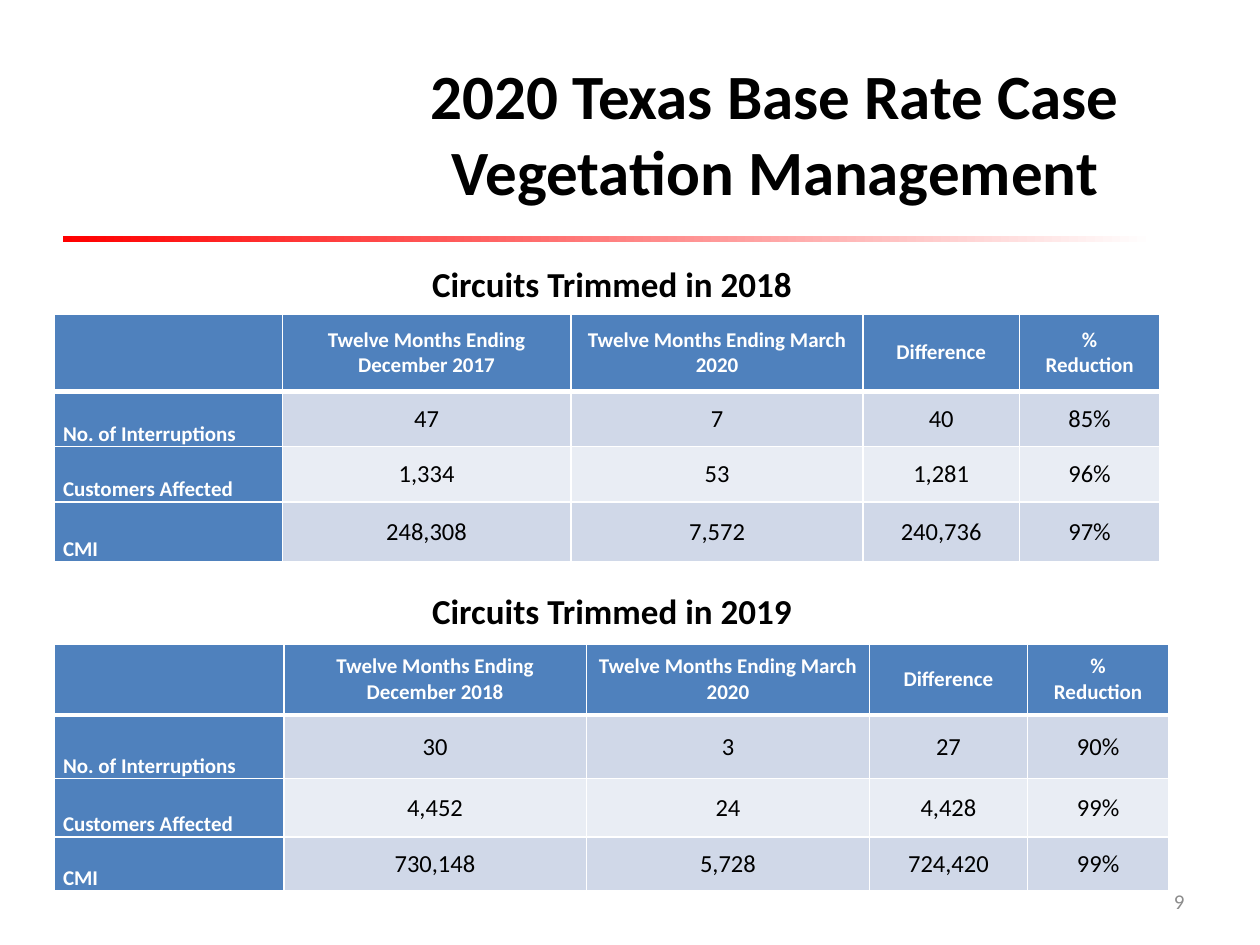
import pptx
import pptx.util
import pptx.dml.color
import pptx.enum.dml
import pptx.enum.shapes
import pptx.enum.text
import pptx.oxml

Pt = pptx.util.Pt
ALIGN = pptx.enum.text.PP_ALIGN
ANCHOR = pptx.enum.text.MSO_ANCHOR
FIT = pptx.enum.text.MSO_AUTO_SIZE

TITLE = "2020 Texas Base Rate Case\vVegetation Management"
PAGE_NUMBER = "9"
ROW_LABELS = ["No. of Interruptions", "Customers Affected", "CMI"]
SECTIONS = [
    {
        "heading": "Circuits Trimmed in 2018",
        "start": "December 2017",
        "values": [
            ["47", "7", "40", "85%"],
            ["1,334", "53", "1,281", "96%"],
            ["248,308", "7,572", "240,736", "97%"],
        ],
        "heading_top": 146.2,
        "table_top": 179.3,
        "columns": [130.3, 165, 167, 89.2, 80.4],
        "rows": [44.5, 31.5, 31.5, 34.5],
    },
    {
        "heading": "Circuits Trimmed in 2019",
        "start": "December 2018",
        "values": [
            ["30", "3", "27", "90%"],
            ["4,452", "24", "4,428", "99%"],
            ["730,148", "5,728", "724,420", "99%"],
        ],
        "heading_top": 333.4,
        "table_top": 368,
        "columns": [131.2, 172.8, 162, 90, 81],
        "rows": [40.5, 36.5, 33.3, 31],
    },
]

THEME = {
    "font": "Calibri",
    "white": "FFFFFF",
    "header": "4F81BD",
    "bands": ["D0D8E8", "E9EDF4"],
    "rule": ["FF0000", "FFFFFF"],
    "title": {"size": 36, "bold": True, "color": "000000"},
    "heading": {"size": 20, "bold": True, "color": "000000"},
    "label": {"size": 12, "bold": True, "color": "FFFFFF"},
    "value": {"size": 14, "bold": False, "color": "000000"},
    "number": {"size": 12, "bold": False, "color": "8C8C8C"},
}
TABLE_LEFT = 31
CELL_FORMAT = {"margin_left": Pt(5), "margin_right": Pt(5), "margin_top": 0, "margin_bottom": 0}


def rgb(code):
    return pptx.dml.color.RGBColor.from_string(code)


def apply(target, values):
    for name, value in values.items():
        setattr(target, name, value)


def write(frame, text, style, align):
    frame.text = text
    look = THEME[style]
    for para in frame.paragraphs:
        para.alignment = align
        for span in para.runs:
            apply(span.font, {"name": THEME["font"], "size": Pt(look["size"]), "bold": look["bold"]})
            span.font.color.rgb = rgb(look["color"])


def add_text(page, place, text, style, align, **frame_format):
    box = page.shapes.add_textbox(*map(Pt, place))
    write(box.text_frame, text, style, align)
    apply(box.text_frame, {"word_wrap": True, **frame_format})


def add_borders(cell, widths):
    properties = cell._tc.get_or_add_tcPr()
    for index, (side, width) in enumerate(widths.items()):
        line = pptx.oxml.parse_xml(
            f'<a:ln{side} xmlns:a="http://schemas.openxmlformats.org/drawingml/2006/main" w="{Pt(width)}">'
            f'<a:solidFill><a:srgbClr val="{THEME["white"]}"/></a:solidFill></a:ln{side}>'
        )
        properties.insert(index, line)


def add_rule(page):
    rule = page.shapes.add_shape(
        pptx.enum.shapes.MSO_SHAPE.RECTANGLE, Pt(36), Pt(134.7), Pt(630), Pt(3.6))
    rule.shadow.inherit = False
    rule.line.fill.background()
    rule.fill.gradient()
    rule.fill.gradient_angle = 0
    for stop, color, position in zip(rule.fill.gradient_stops, THEME["rule"], (0, 0.99)):
        stop.color.rgb = rgb(color)
        stop.position = position


def add_section(page, section):
    add_text(page, (239.8, section["heading_top"], 284.4, 31.5), section["heading"],
             "heading", ALIGN.LEFT, auto_size=FIT.SHAPE_TO_FIT_TEXT)
    header = ["", f"Twelve Months Ending {section['start']}",
              "Twelve Months Ending March 2020", "Difference", "%\nReduction"]
    content = [header] + [[label, *row] for label, row in zip(ROW_LABELS, section["values"])]
    columns, rows = section["columns"], section["rows"]
    table = page.shapes.add_table(
        len(rows), len(columns), Pt(TABLE_LEFT), Pt(section["table_top"]),
        Pt(sum(columns)), Pt(sum(rows))).table
    for column, width in zip(table.columns, columns):
        column.width = Pt(width)
    for row, height in zip(table.rows, rows):
        row.height = Pt(height)
    for i, texts in enumerate(content):
        for j, text in enumerate(texts):
            cell = table.cell(i, j)
            is_row_label = i > 0 and j == 0
            is_value = i > 0 and j > 0
            write(cell.text_frame, text, "value" if is_value else "label",
                  ALIGN.LEFT if is_row_label else ALIGN.CENTER)
            apply(cell, CELL_FORMAT)
            cell.vertical_anchor = ANCHOR.BOTTOM if is_row_label else ANCHOR.MIDDLE
            cell.fill.solid()
            cell.fill.fore_color.rgb = rgb(THEME["bands"][(i - 1) % 2] if is_value else THEME["header"])
            add_borders(cell, {"L": 1, "R": 1, "T": 3 if i == 1 else 1, "B": 3 if i == 0 else 1})


def main():
    deck = pptx.Presentation()
    apply(deck, {"slide_width": Pt(720), "slide_height": Pt(540)})
    page = deck.slides.add_slide(deck.slide_layouts[6])
    add_rule(page)
    add_text(page, (201.6, 21.6, 482.4, 108), TITLE, "title", ALIGN.CENTER,
             vertical_anchor=ANCHOR.MIDDLE)
    add_text(page, (639.4, 500.4, 44.6, 28.8), PAGE_NUMBER, "number", ALIGN.RIGHT,
             vertical_anchor=ANCHOR.MIDDLE)
    for section in SECTIONS:
        add_section(page, section)
    deck.save("out.pptx")


if __name__ == "__main__":
    main()
